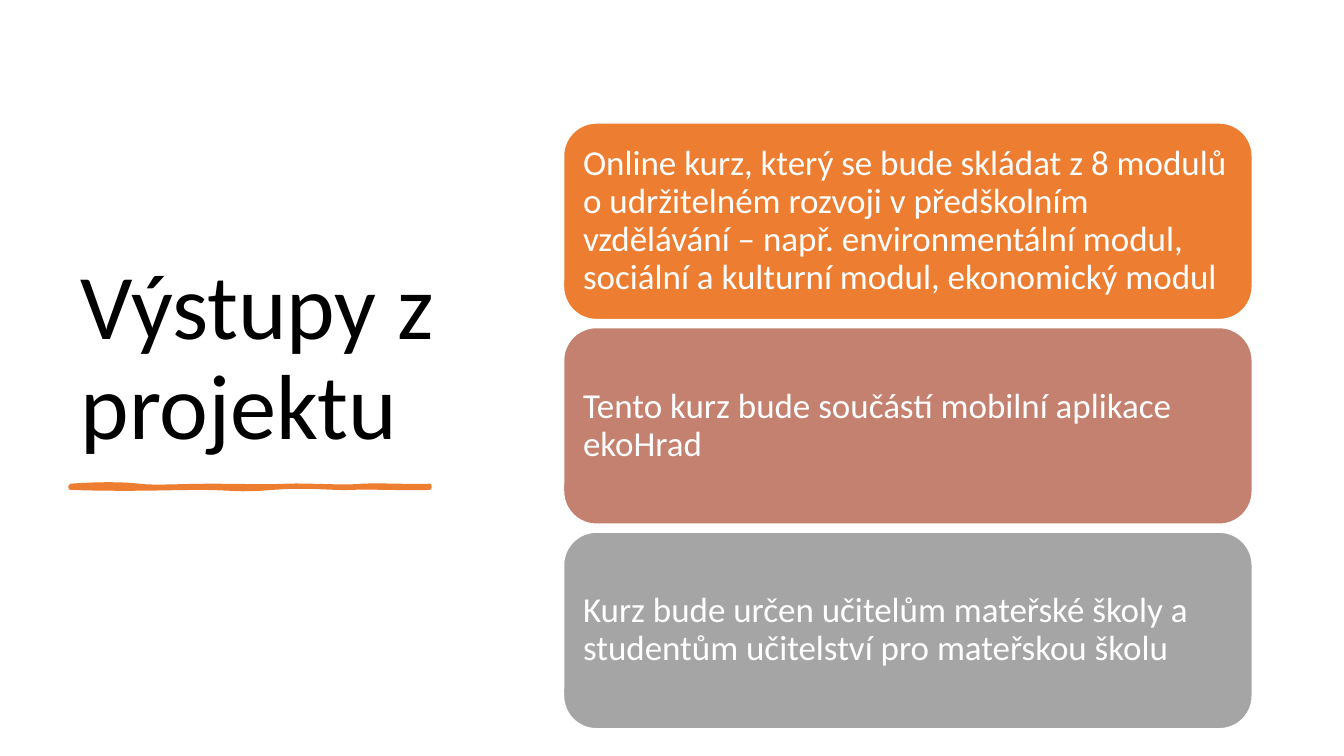
from lxml import etree
from pptx import Presentation
from pptx import util as u
from pptx.dml.color import RGBColor
from pptx.enum import shapes, text
from pptx.oxml.ns import qn

COLORS = {"text": "000000", "white": "FFFFFF", "orange": "ED7D31",
          "rose": "C48170", "gray": "A5A5A5"}
CARDS = [
    ("orange", "Online kurz, který se bude skládat z 8 modulů o udržitelném rozvoji "
               "v předškolním vzdělávání – např. environmentální modul, sociální "
               "a kulturní modul, ekonomický modul"),
    ("rose", "Tento kurz bude součástí mobilní aplikace ekoHrad"),
    ("gray", "Kurz bude určen učitelům mateřské školy a studentům učitelství "
             "pro mateřskou školu"),
]
STROKE = [
    [(0, 0), (0.27, -0.02), (0.51, -0.02), (0.68, 0)],
    [(0.68, 0), (0.85, 0.02), (1.07, 0), (1.39, 0)],
    [(1.39, 0), (1.71, 0), (1.9, 0.01), (2.14, 0)],
    [(2.14, 0), (2.38, -0.01), (2.69, 0.02), (2.89, 0)],
    [(2.89, 0), (3.09, -0.01), (3.42, 0.01), (3.56, 0)],
    [(3.56, 0.02), (3.38, 0.03), (2.94, 0.01), (2.78, 0.02)],
    [(2.78, 0.02), (2.62, 0.03), (2.34, -0.01), (2, 0.02)],
    [(2, 0.02), (1.65, 0.05), (1.61, 0.02), (1.29, 0.02)],
    [(1.29, 0.02), (0.96, 0.02), (0.62, 0.04), (0, 0.02)],
]


def rgb(name):
    """Return the named colour."""
    return RGBColor.from_string(COLORS[name])


def set_text(tf, content, size, color, anchor, margin):
    """Write one left-aligned paragraph into a text frame."""
    frame = {"word_wrap": True, "vertical_anchor": anchor,
             "margin_left": margin[0], "margin_right": margin[0],
             "margin_top": margin[1], "margin_bottom": margin[1]}
    for key, value in frame.items():
        setattr(tf, key, value)
    p = tf.paragraphs[0]
    p.alignment, p.line_spacing = text.PP_ALIGN.LEFT, 0.9
    r = p.add_run()
    r.text = content
    for key, value in {"name": "Calibri", "size": u.Pt(size)}.items():
        setattr(r.font, key, value)
    r.font.color.rgb = rgb(color)


def paint(sp, fill, line, width):
    """Give a shape a flat fill and an outline."""
    sp.shadow.inherit = False
    sp.fill.solid()
    sp.fill.fore_color.rgb = rgb(fill)
    sp.line.color.rgb = rgb(line)
    sp.line.width = u.Pt(width)


def add_title(s, x, y, w, h):
    """Place the title at the bottom of its box."""
    sp = s.shapes.add_textbox(*map(u.Inches, (x, y, w, h)))
    set_text(sp.text_frame, "Výstupy z projektu", 66, "text",
             text.MSO_ANCHOR.BOTTOM, (u.Inches(0.1), u.Inches(0.05)))


def bezier(curve, t):
    """Return the point at t on a cubic curve."""
    weights = ((1 - t) ** 3, 3 * t * (1 - t) ** 2, 3 * t * t * (1 - t), t ** 3)
    return [sum(k * pt[axis] for k, pt in zip(weights, curve)) for axis in (0, 1)]


def add_underline(s, x, y, steps=8):
    """Draw the hand-drawn stroke from its top left corner."""
    points = [bezier(curve, i / steps) for curve in STROKE for i in range(steps + 1)]
    points = [(u.Inches(x + dx), u.Inches(y + dy)) for dx, dy in points]
    fb = s.shapes.build_freeform(*points[0])
    fb.add_line_segments(points[1:], close=True)
    sp = fb.convert_to_shape()
    paint(sp, "orange", "orange", 3)
    etree.SubElement(sp.line._get_or_add_ln(), qn("a:round"))


def add_cards(s, x, y, w, h, gap=0.08):
    """Stack equal rounded cards in the box."""
    card_h = (h - gap * (len(CARDS) - 1)) / len(CARDS)
    for i, (color, content) in enumerate(CARDS):
        top = y + i * (card_h + gap)
        sp = s.shapes.add_shape(shapes.MSO_SHAPE.ROUNDED_RECTANGLE,
                                *map(u.Inches, (x, top, w, card_h)))
        paint(sp, color, "white", 1)
        set_text(sp.text_frame, content, 25, "white",
                 text.MSO_ANCHOR.MIDDLE, (u.Inches(0.1), u.Inches(0.1)))


def main():
    """Build and save the slide."""
    prs = Presentation()
    prs.slide_width, prs.slide_height = u.Inches(13.33), u.Inches(7.5)
    s = prs.slides.add_slide(prs.slide_layouts[6])
    add_title(s, 0.7, 0.7, 3.91, 3.91)
    add_underline(s, 0.7, 4.82)
    add_cards(s, 5.59, 1.22, 6.83, 6.01)
    prs.save("out.pptx")


if __name__ == "__main__":
    main()
